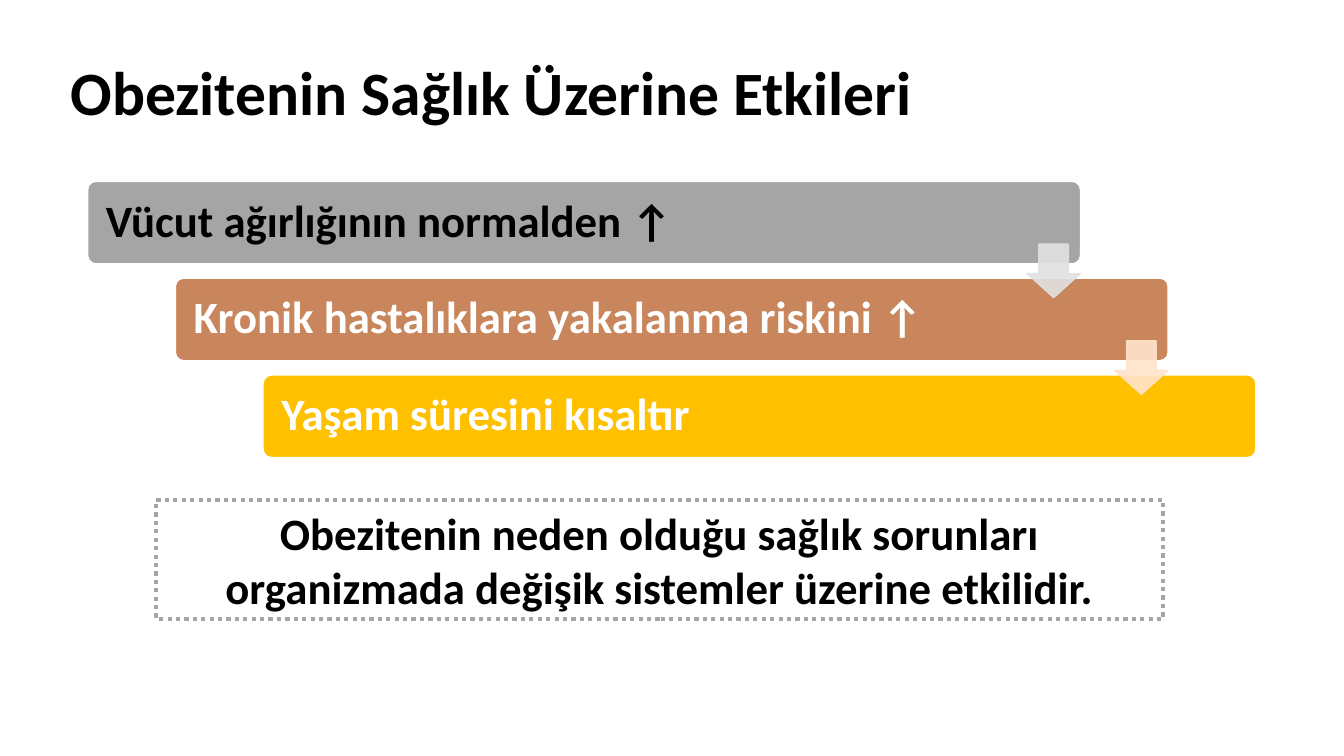
from lxml import etree
from pptx import Presentation
from pptx.dml.color import RGBColor
from pptx.enum import dml, shapes, text
from pptx.oxml.ns import qn
from pptx.util import Cm, Pt

HUES = {"black": "000000", "white": "FFFFFF", "gray": "A5A5A5",
        "brown": "C9865D", "gold": "FFC000", "pale": "E1E1E1", "peach": "FFE4CB"}
STEPS = [("Vücut ağırlığının normalden ↑", "gray", "black"),
         ("Kronik hastalıklara yakalanma riskini ↑", "brown", "white"),
         ("Yaşam süresini kısaltır", "gold", "white")]
LEFT, TOP, SHIFT, DROP = 2.21, 4.57, 2.21, 2.44


def add_box(kind, place, fill, line, width):
    """Add a filled, outlined shape without shadow; place is in cm."""
    box = slide.shapes.add_shape(kind, *map(Cm, place))
    box.shadow.inherit = False
    box.fill.solid()
    box.fill.fore_color.rgb = RGBColor.from_string(HUES[fill])
    box.line.color.rgb = RGBColor.from_string(HUES[line])
    box.line.width = Pt(width)
    return box


def set_text(frame, words, size, hue, align, space):
    frame.word_wrap = True
    frame.vertical_anchor = text.MSO_ANCHOR.MIDDLE
    frame.text = words
    para = frame.paragraphs[0]
    para.alignment = align
    para.line_spacing = space
    para.font.name = "Calibri"
    para.font.size = Pt(size)
    para.font.bold = True
    para.font.color.rgb = RGBColor.from_string(HUES[hue])


deck = Presentation()
deck.slide_width, deck.slide_height = Cm(33.87), Cm(19.05)
slide = deck.slides.add_slide(deck.slide_layouts[5])

title = slide.shapes.title
title.left, title.top, title.width, title.height = map(Cm, (1.52, 0.56, 29.21, 3.68))
set_text(title.text_frame, "Obezitenin Sağlık Üzerine Etkileri", 44, "black",
         text.PP_ALIGN.LEFT, 0.9)

# Staircase of bars
for i, (words, fill, hue) in enumerate(STEPS):
    bar = add_box(shapes.MSO_SHAPE.ROUNDED_RECTANGLE,
                  (LEFT + i * SHIFT, TOP + i * DROP, 25.02, 2.08), fill, "white", 1)
    bar.adjustments[0] = 0.1
    bar.text_frame.margin_left = Cm(0.4)
    set_text(bar.text_frame, words, 32, hue, text.PP_ALIGN.LEFT, 0.9)

# Arrows from each bar to the next
for i, hue in enumerate(["pale", "peach"]):
    arrow = add_box(shapes.MSO_SHAPE.DOWN_ARROW,
                    (LEFT + 23.67 + i * SHIFT, TOP + 1.58 + i * DROP, 1.35, 1.35),
                    hue, hue, 1)
    arrow.adjustments[0], arrow.adjustments[1] = 0.55, 0.45
    for color in arrow.element.spPr.iter(qn("a:srgbClr")):
        etree.SubElement(color, qn("a:alpha"), val="90000")

note = add_box(shapes.MSO_SHAPE.RECTANGLE, (3.94, 12.6, 25.37, 3), "white", "gray", 3)
note.line.dash_style = dml.MSO_LINE.ROUND_DOT
set_text(note.text_frame,
         "Obezitenin neden olduğu sağlık sorunları organizmada değişik sistemler "
         "üzerine etkilidir.", 32, "black", text.PP_ALIGN.CENTER, 1.0)

deck.save("out.pptx")
